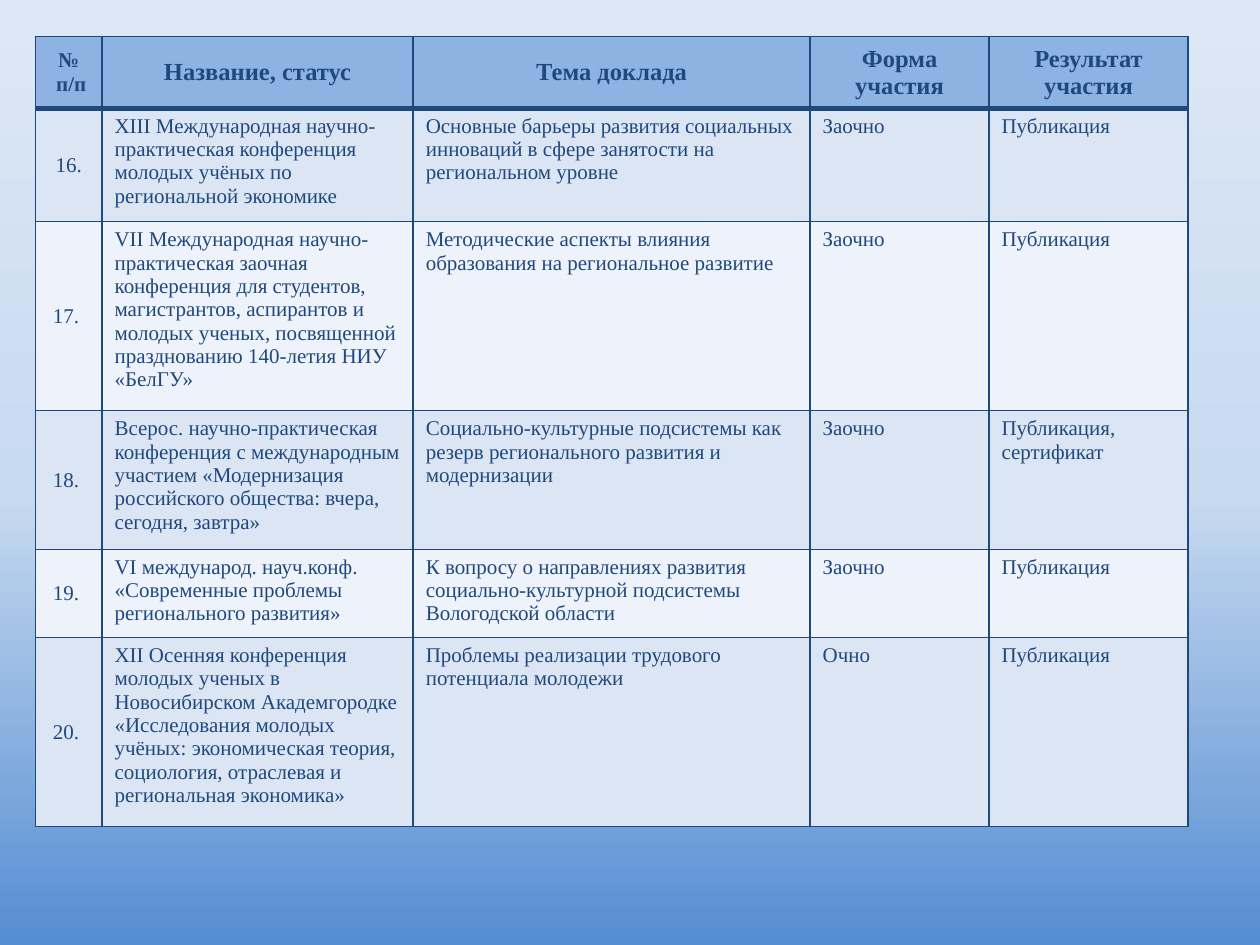
from copy import deepcopy
from dataclasses import dataclass

from lxml import etree
from pptx import Presentation
from pptx.dml.color import RGBColor
from pptx.enum.text import MSO_ANCHOR, PP_ALIGN
from pptx.oxml.ns import qn
from pptx.slide import Slide
from pptx.table import _Cell
from pptx.util import Inches, Pt

CENTER, LEFT = PP_ALIGN.CENTER, PP_ALIGN.LEFT
MIDDLE, TOP = MSO_ANCHOR.MIDDLE, MSO_ANCHOR.TOP


@dataclass(frozen=True)
class Theme:
    font: str = "Times New Roman"
    ink: str = "1F497D"
    header_fill: str = "8DB3E2"
    band_fills: tuple[str, str] = ("DBE5F4", "EEF2FA")
    background: tuple[tuple[float, str], ...] = (
        (0, "548DD2"), (0.48, "C8DAF0"), (1, "DDE8F6"))
    header_size: float = 14
    body_size: float = 12
    thin_line: float = 1
    thick_line: float = 3


@dataclass(frozen=True)
class Conference:
    number: str
    title: str
    topic: str
    form: str
    result: str
    height: float


THEME = Theme()
COLUMN_WIDTHS = (0.53, 2.47, 3.15, 1.42, 1.58)
HEADER_HEIGHT = 0.57
HEADERS = ("№\n п/п", "Название, статус", "Тема доклада", "Форма участия", "Результат участия")
CONFERENCES = (
    Conference(
        "16.",
        "XIII Международная научно-практическая конференция молодых учёных "
        "по региональной экономике",
        "Основные барьеры развития социальных инноваций в сфере занятости "
        "на региональном уровне",
        "Заочно", "Публикация", 0.9),
    Conference(
        "17. ",
        "VII Международная научно-практическая заочная конференция для студентов, "
        "магистрантов, аспирантов и молодых ученых, посвященной празднованию "
        "140-летия НИУ «БелГУ»",
        "Методические аспекты влияния образования на региональное развитие",
        "Заочно", "Публикация", 1.5),
    Conference(
        "18. ",
        "Всерос. научно-практическая конференция с международным участием "
        "«Модернизация российского общества: вчера, сегодня, завтра»",
        "Социально-культурные подсистемы как резерв регионального развития "
        "и модернизации",
        "Заочно", "Публикация, сертификат", 1.1),
    Conference(
        "19. ",
        "VI международ. науч.конф. «Современные проблемы регионального развития»",
        "К вопросу о направлениях развития социально-культурной подсистемы "
        "Вологодской области",
        "Заочно", "Публикация", 0.7),
    Conference(
        "20. ",
        "XII Осенняя конференция молодых ученых в Новосибирском Академгородке "
        "«Исследования молодых учёных: экономическая теория, социология, "
        "отраслевая и региональная экономика»",
        "Проблемы реализации трудового потенциала молодежи",
        "Очно", "Публикация", 1.5),
)


def paint_background(slide: Slide) -> None:
    fill = slide.background.fill
    fill.gradient()
    fill.gradient_angle = 90
    stop_list = next(slide.element.iter(qn("a:gsLst")))
    stop_list.append(deepcopy(stop_list[0]))
    for stop, (position, color) in zip(fill.gradient_stops, THEME.background):
        stop.position = position
        stop.color.rgb = RGBColor.from_string(color)


def set_borders(cell: _Cell, top: float, bottom: float) -> None:
    properties = cell._tc.get_or_add_tcPr()
    sides = {"L": THEME.thin_line, "R": THEME.thin_line, "T": top, "B": bottom}
    for side, width in sides.items():
        line = etree.SubElement(properties, qn(f"a:ln{side}"), w=str(Pt(width)))
        solid = etree.SubElement(line, qn("a:solidFill"))
        etree.SubElement(solid, qn("a:srgbClr"), val=THEME.ink)


def write_cell(cell: _Cell, text: str, size: float, bold: bool, centered: bool) -> None:
    """Put each line of the text in its own paragraph."""
    cell.vertical_anchor = MIDDLE if centered else TOP
    frame = cell.text_frame
    for index, words in enumerate(text.split("\n")):
        para = frame.add_paragraph() if index else frame.paragraphs[0]
        para.alignment = CENTER if centered else LEFT
        span = para.add_run()
        span.text = words
        span.font.name = THEME.font
        span.font.size = Pt(size)
        span.font.bold = bold
        span.font.color.rgb = RGBColor.from_string(THEME.ink)


def add_conference_table(slide: Slide) -> None:
    rows = [HEADERS] + [(item.number, item.title, item.topic, item.form, item.result)
                        for item in CONFERENCES]
    heights = [HEADER_HEIGHT] + [item.height for item in CONFERENCES]
    table = slide.shapes.add_table(
        len(rows), len(COLUMN_WIDTHS), Inches(0.28), Inches(0.29),
        Inches(sum(COLUMN_WIDTHS)), Inches(sum(heights))).table
    table.first_row = table.horz_banding = False
    for column, width in zip(table.columns, COLUMN_WIDTHS):
        column.width = Inches(width)
    for row_index, (texts, height) in enumerate(zip(rows, heights)):
        table.rows[row_index].height = Inches(height)
        is_header = row_index == 0
        fill = THEME.header_fill if is_header else THEME.band_fills[(row_index - 1) % 2]
        top = THEME.thick_line if row_index == 1 else THEME.thin_line
        bottom = THEME.thick_line if is_header else THEME.thin_line
        for column_index, text in enumerate(texts):
            cell = table.cell(row_index, column_index)
            is_number = column_index == 0
            size = THEME.header_size if is_header and not is_number else THEME.body_size
            set_borders(cell, top, bottom)
            cell.fill.solid()
            cell.fill.fore_color.rgb = RGBColor.from_string(fill)
            write_cell(cell, text, size, is_header, is_header or is_number)


def main() -> None:
    deck = Presentation()
    deck.slide_width, deck.slide_height = Inches(10), Inches(7.5)
    page = deck.slides.add_slide(deck.slide_layouts[6])
    paint_background(page)
    add_conference_table(page)
    deck.save("out.pptx")


if __name__ == "__main__":
    main()
